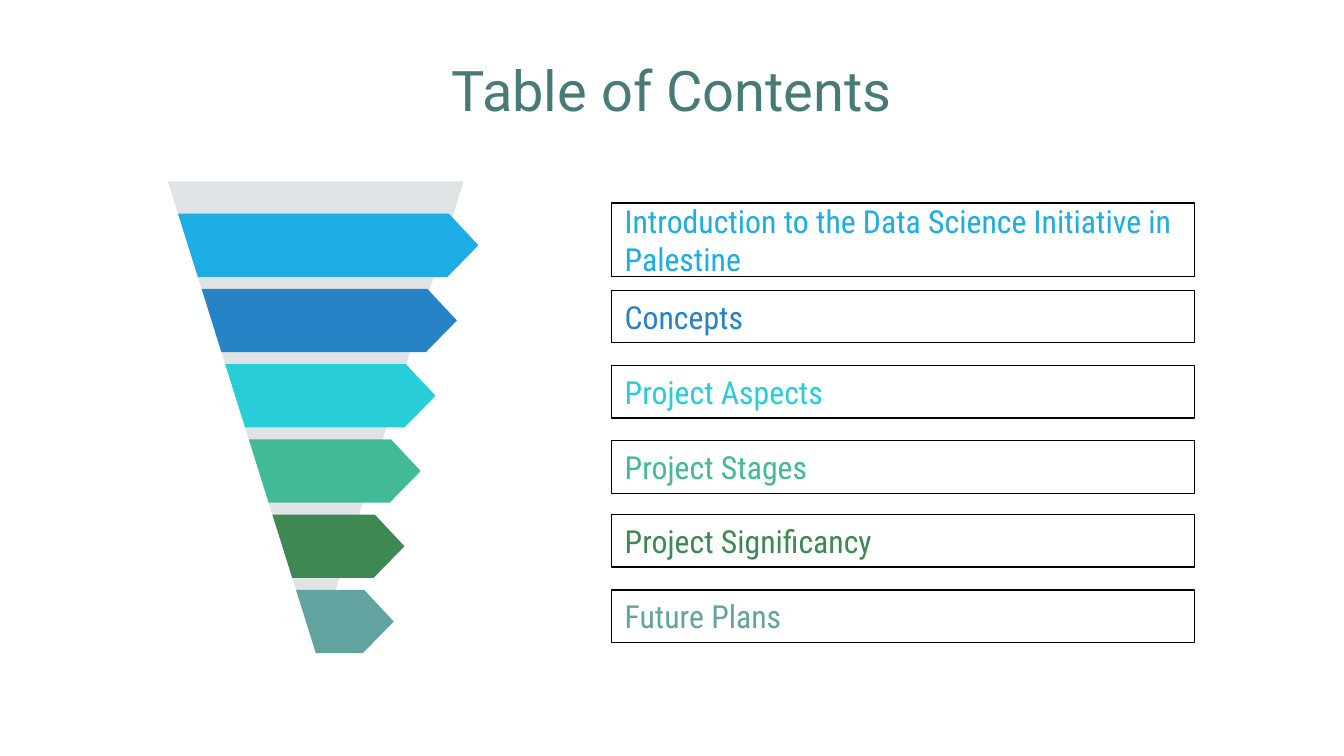
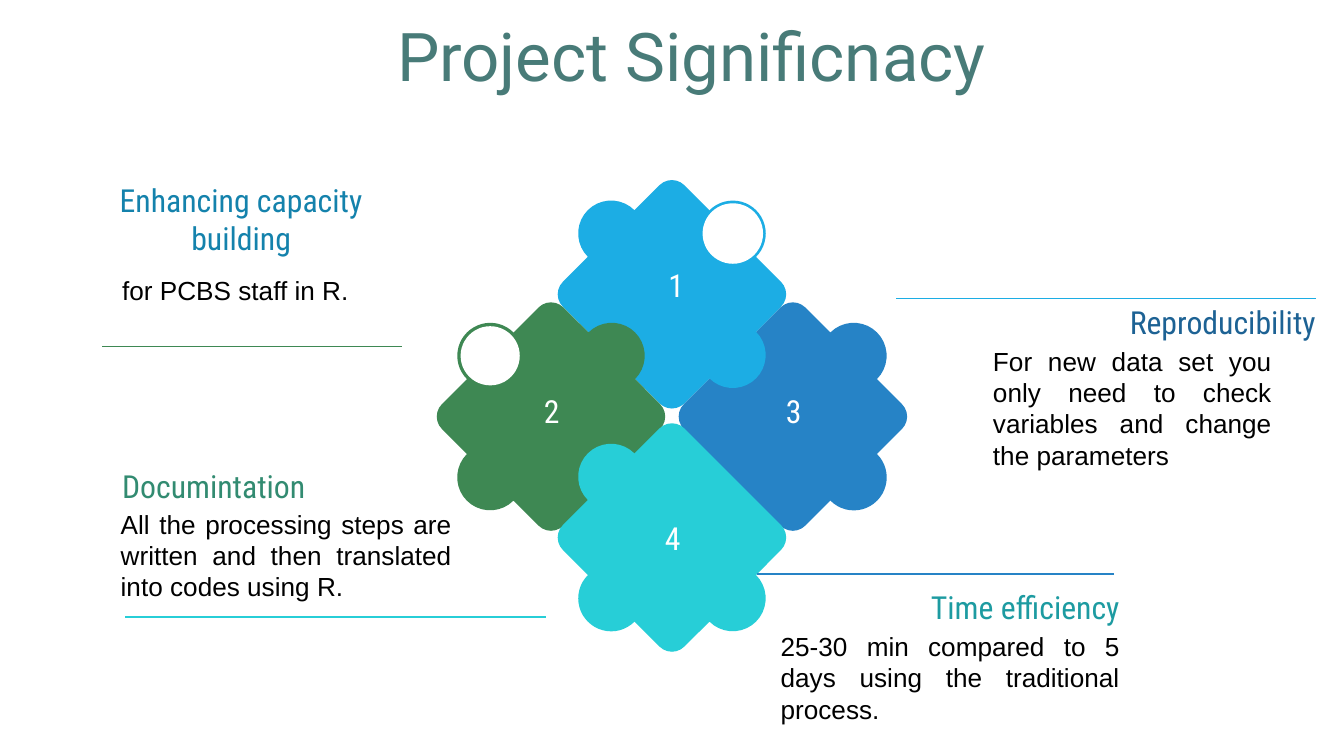
"""Builds a contents funnel slide and a four-piece puzzle slide."""
from math import cos, radians, sin

from lxml import etree
from pptx import Presentation
from pptx.dml.color import RGBColor
from pptx.enum.shapes import MSO_CONNECTOR, MSO_SHAPE
from pptx.enum.text import MSO_ANCHOR, MSO_AUTO_SIZE, PP_ALIGN
from pptx.oxml.ns import qn
from pptx.util import Inches, Pt

LEFT, CENTER, RIGHT, JUSTIFY = PP_ALIGN.LEFT, PP_ALIGN.CENTER, PP_ALIGN.RIGHT, PP_ALIGN.JUSTIFY
TOP, MIDDLE = MSO_ANCHOR.TOP, MSO_ANCHOR.MIDDLE
NO_FIT = MSO_AUTO_SIZE.NONE
RECTANGLE, OVAL = MSO_SHAPE.RECTANGLE, MSO_SHAPE.OVAL
STRAIGHT = MSO_CONNECTOR.STRAIGHT

TITLE_FONT, HEADING_FONT, BODY_FONT = "Roboto", "Roboto Condensed", "Arial"
TEAL, BLACK, WHITE, GREY = "487B78", "000000", "FFFFFF", "DFE3E5"
SKY, BLUE, CYAN, MINT, GREEN, SAGE = "1CADE4", "2683C6", "27CED7", "42BA97", "3E8853", "62A39F"

# label, colour, arrow tip, label top relative to the arrow, label height
CONTENTS = [
    ("Introduction to the Data Science Initiative in Palestine", SKY, 3.56, -0.08, 0.55),
    ("Concepts", BLUE, 3.4, 0.01, 0.39),
    ("Project Aspects", CYAN, 3.24, 0.01, 0.39),
    ("Project Stages", MINT, 3.13, 0.01, 0.39),
    ("Project Significancy", GREEN, 3.01, 0, 0.39),
    ("Future Plans", SAGE, 2.93, 0, 0.39),
]
FUNNEL_LEFT, FUNNEL_TOP, FUNNEL_WIDTH, FUNNEL_HEIGHT = 1.25, 1.35, 2.2, 3.51
ARROW_TOP, ARROW_PITCH, ARROW_HEIGHT, ARROW_HEAD = 1.59, 0.56, 0.47, 0.22

LOWER_RIGHT, LOWER_LEFT, UPPER_LEFT, UPPER_RIGHT = 45, 135, 225, 315
# number, colour, centre, knob directions, socket direction, hole diameter, number top
PIECES = [
    ("3", BLUE, (5.9, 3.1), (LOWER_LEFT, UPPER_RIGHT), LOWER_RIGHT, 0, 2.89),
    (" 1", SKY, (5, 2.19), (UPPER_LEFT, LOWER_RIGHT), UPPER_RIGHT, 0.45, 1.95),
    ("2", GREEN, (4.1, 3.1), (LOWER_LEFT, UPPER_RIGHT), UPPER_LEFT, 0.44, 2.89),
    ("4", CYAN, (5, 4), (UPPER_LEFT, LOWER_RIGHT), LOWER_LEFT, 0, 3.83),
]
CORNER_DISTANCE, CORNER_RADIUS = 0.72, 0.13
KNOB_DISTANCE, KNOB_DIAMETER = 0.64, 0.49

BENEFITS = [
    {"heading": ("Reproducibility", (7.62, 2.2, 2.27, 0.39), RIGHT, "1D6294"),
     "body": ("For new data set you only need to check variables and change the parameters",
              (7.29, 2.9, 2.27, 0.27), JUSTIFY),
     "rule": (9.79, 6.67, 2.22, SKY)},
    {"heading": ("Time efficiency", (5.71, 4.32, 2.72, 0.39), RIGHT, "1D9BA1"),
     "body": ("25-30 min compared to 5 days using the traditional process.",
              (5.71, 4.64, 2.72, 0.8), JUSTIFY),
     "rule": (8.29, 5.63, 4.27, BLUE)},
    {"heading": ("Enhancing capacity building", (0.66, 1.37, 2.27, 0.52), CENTER, "1482AC"),
     "body": ("for PCBS staff in R.", (0.81, 1.73, 2.11, 0.86), LEFT),
     "rule": (2.99, 0.76, 2.58, GREEN)},
    {"heading": ("Documintation", (0.81, 3.42, 2.27, 0.39), LEFT, "328B71"),
     "body": ("All the processing steps are written and then translated into codes using R.",
              (0.8, 3.9, 2.66, 0.46), JUSTIFY),
     "rule": (4.06, 0.93, 4.59, CYAN)},
]


def rgb(color):
    return RGBColor.from_string(color)


def inches(values):
    return [Inches(value) for value in values]


def write(shape, text, size, font, color, align=LEFT, anchor=MIDDLE):
    frame = shape.text_frame
    frame.text = text
    frame.word_wrap = True
    frame.auto_size = NO_FIT
    frame.vertical_anchor = anchor
    frame.margin_left = frame.margin_right = Inches(0.1)
    frame.margin_top = frame.margin_bottom = Inches(0.1)
    para = frame.paragraphs[0]
    para.alignment = align
    span = para.runs[0]
    span.font.size = Pt(size)
    span.font.name = font
    span.font.color.rgb = rgb(color)
    return para


def add_text(page, area, *style):
    write(page.shapes.add_textbox(*inches(area)), *style)


def paint(shape, color):
    shape.shadow.inherit = False
    shape.fill.solid()
    shape.fill.fore_color.rgb = rgb(color)
    shape.line.fill.background()


def add_outline(page, points, color):
    corners = [tuple(inches(point)) for point in points]
    builder = page.shapes.build_freeform(*corners[0])
    builder.add_line_segments(corners[1:], close=True)
    paint(builder.convert_to_shape(), color)


def add_circle(page, center, diameter, color):
    x, y = center
    area = (x - diameter / 2, y - diameter / 2, diameter, diameter)
    paint(page.shapes.add_shape(OVAL, *inches(area)), color)


def add_rule(page, start, end, y, color):
    rule = page.shapes.add_connector(STRAIGHT, *inches((start, y, end, y)))
    rule.line.color.rgb = rgb(color)
    rule.line.width = Pt(0.75)
    etree.SubElement(rule._element.spPr, qn("a:effectLst"))


def add_page(deck, title, area, size, anchor):
    page = deck.slides.add_slide(deck.slide_layouts[5])
    box = page.shapes.title
    box.left, box.top, box.width, box.height = inches(area)
    write(box, title, size, TITLE_FONT, TEAL, CENTER, anchor).line_spacing = 0.9
    return page


def polar(center, distance, angle):
    x, y = center
    return x + distance * cos(radians(angle)), y + distance * sin(radians(angle))


def piece_points(center, knobs):
    points = []
    for corner in range(0, 360, 90):
        middle = polar(center, CORNER_DISTANCE, corner)
        points += [polar(middle, CORNER_RADIUS, corner + turn) for turn in range(-45, 46, 15)]
        side = corner + 45
        if side in knobs:
            middle = polar(center, KNOB_DISTANCE, side)
            points += [polar(middle, KNOB_DIAMETER / 2, side + turn)
                       for turn in range(-90, 91, 10)]
    return points


def add_piece(page, number, color, center, knobs, socket, hole, number_top):
    socket_center = polar(center, KNOB_DISTANCE, socket)
    add_circle(page, socket_center, KNOB_DIAMETER, color)
    add_outline(page, piece_points(center, knobs), color)
    if hole:
        add_circle(page, socket_center, hole, WHITE)
    area = (center[0] - 0.76, number_top, 1.53, 0.34)
    add_text(page, area, number, 17, HEADING_FONT, WHITE, CENTER)


def funnel_edge(y):
    return FUNNEL_LEFT + (y - FUNNEL_TOP) * FUNNEL_WIDTH / 2 / FUNNEL_HEIGHT


def add_contents_row(page, top, label, color, tip, label_shift, label_height):
    bottom, shoulder = top + ARROW_HEIGHT, tip - ARROW_HEAD
    add_outline(page, [
        (funnel_edge(top), top), (funnel_edge(bottom), bottom), (shoulder - 0.01, bottom),
        (tip, top + ARROW_HEIGHT / 2), (shoulder, top)], color)
    area = (4.55, top + label_shift, 4.34, label_height)
    box = page.shapes.add_shape(RECTANGLE, *inches(area))
    box.shadow.inherit = False
    box.fill.background()
    box.line.color.rgb = rgb(BLACK)
    box.line.width = Pt(0.75)
    write(box, label, 17, HEADING_FONT, color)


def build_contents(deck):
    page = add_page(deck, "Table of Contents", (1.4, 0.37, 7.2, 0.73), 30, TOP)
    add_outline(page, [
        (FUNNEL_LEFT, FUNNEL_TOP), (FUNNEL_LEFT + FUNNEL_WIDTH, FUNNEL_TOP),
        (FUNNEL_LEFT + FUNNEL_WIDTH / 2, FUNNEL_TOP + FUNNEL_HEIGHT)], GREY)
    for index, row in enumerate(CONTENTS):
        add_contents_row(page, ARROW_TOP + index * ARROW_PITCH, *row)


def build_significance(deck):
    page = add_page(deck, "Project Significnacy", (0.92, 0.18, 8.45, 0.53), 36, MIDDLE)
    for piece in PIECES:
        add_piece(page, *piece)
    for benefit in BENEFITS:
        text, area, align = benefit["body"]
        add_text(page, area, text, 14, BODY_FONT, BLACK, align)
        text, area, align, color = benefit["heading"]
        add_text(page, area, text, 17, HEADING_FONT, color, align)
        add_rule(page, *benefit["rule"])


def main():
    deck = Presentation()
    deck.slide_width = Inches(10)
    deck.slide_height = deck.slide_width * 9 // 16
    build_contents(deck)
    build_significance(deck)
    deck.save("out.pptx")


if __name__ == "__main__":
    main()
